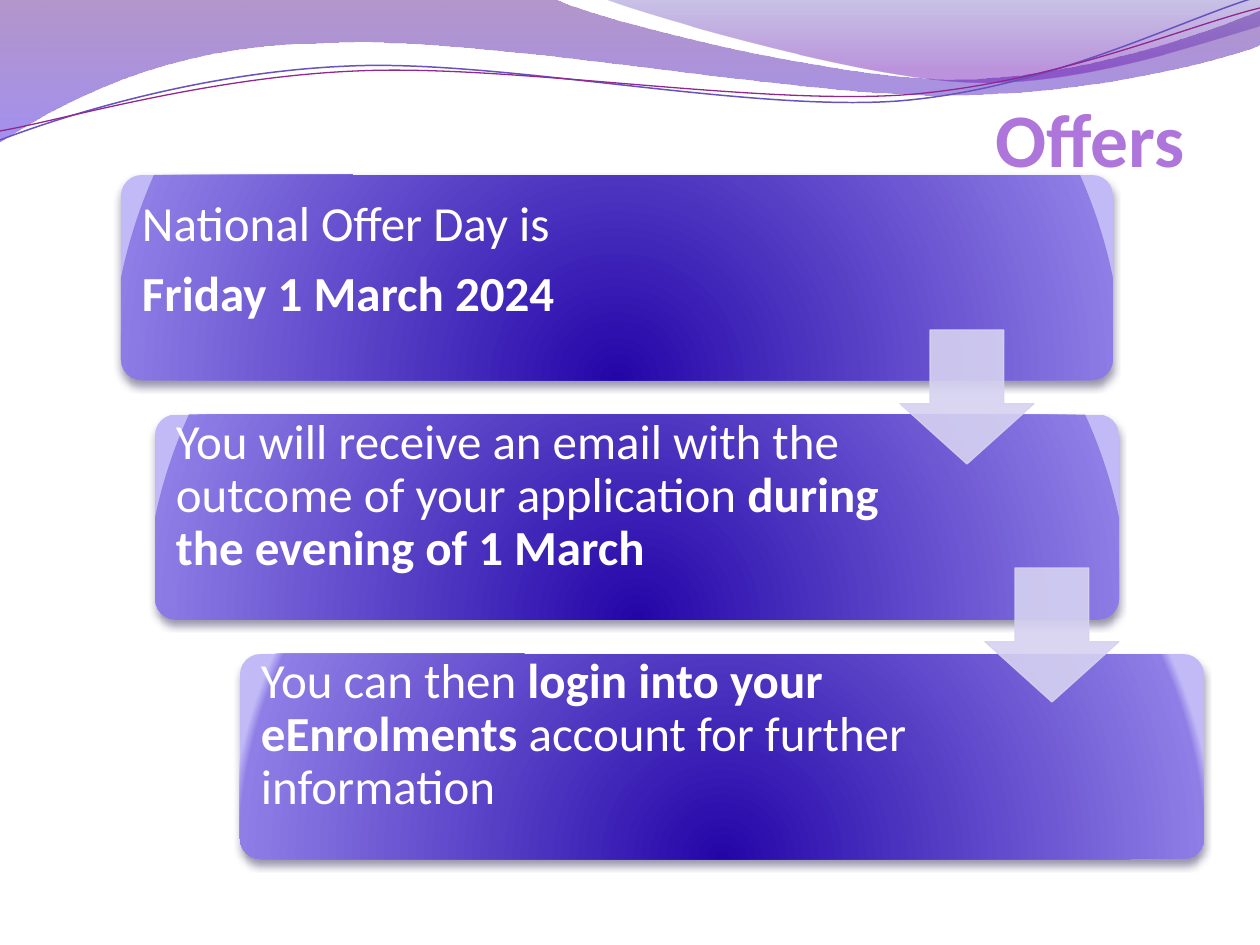
from dataclasses import dataclass

from lxml import etree
from pptx import Presentation
from pptx.dml.color import RGBColor
from pptx.enum.shapes import MSO_SHAPE
from pptx.enum.text import MSO_ANCHOR, MSO_AUTO_SIZE, PP_ALIGN
from pptx.oxml.ns import qn
from pptx.util import Pt

ROUNDED, DOWN_ARROW = MSO_SHAPE.ROUNDED_RECTANGLE, MSO_SHAPE.DOWN_ARROW
TOP, MIDDLE = MSO_ANCHOR.TOP, MSO_ANCHOR.MIDDLE
RIGHT, LEFT = PP_ALIGN.RIGHT, PP_ALIGN.LEFT
NO_AUTOFIT = MSO_AUTO_SIZE.NONE
PX = 914400 / 126
TITLE_ONLY = 5


@dataclass(frozen=True)
class Theme:
    font: str = "Calibri"
    title_size: float = 43.2
    body_size: int = 28
    title: str = "AE76DB"
    body: str = "FFFFFF"
    card_core: str = "2406A8"
    card_edge: str = "8F7EE6"
    card_corner: str = "C2BAF7"
    shadow: str = "28204D"
    arrow: str = "D6D2F1"


THEME = Theme()
TITLE = "Offers"

# Each card: left, width, text width, text inset, gradient edge, paragraphs of (text, bold)
CARDS = [
    (121, 992, 764, 22, 100, [
        [("National Offer Day is", False)],
        [("Friday 1 March 2024", True)],
    ]),
    (155, 964, 733, 1, 100, [
        [("You will receive an email with the outcome of your application ", False),
         ("during the evening of 1 March", True)],
    ]),
    (240, 964, 733, 0, 98, [
        [("You can then ", False), ("login into your eEnrolments", True),
         (" account for further information", False)],
    ]),
]
CARD_TOP, CARD_STEP, CARD_HEIGHT = 175, 239.5, 205
ARROW_LEFT, ARROW_TOP, ARROW_SIZE = 900, 330, 134
ARROW_STEP = (85, 238)

# Path pieces: one point is a straight line, three points are a Bezier curve
WAVES = [
    ((0, -1), [
        [(554, -1)],
        [(600, 21), (837, 79), (955, 79)],
        [(1075, 79), (1207, 33), (1260, 11)],
        [(1261, 45)],
        [(1239, 55), (1096, 96), (940, 95)],
        [(784, 95), (481, 35), (324, 43)],
        [(163, 44), (58, 105), (-1, 142)],
    ], [(0, "58188D", 45), (100, "5735E4", 55)]),
    ((604, -1), [
        [(641, 14), (859, 78), (969, 82)],
        [(1079, 87), (1211, 40), (1260, 26)],
        [(1260, 0)],
    ], [(0, "4E37AE", 30), (80, "6A11B3", 45)]),
]
RIBBONS = [
    ((0, 140), [
        [(60, 117), (199, 72), (349, 66)],
        [(498, 59), (747, 112), (898, 101)],
        [(1049, 89), (1182, 19), (1257, -3)],
    ], "6752BF", 0.85),
    ((0, 131), [
        [(59, 121), (207, 77), (357, 71)],
        [(508, 64), (752, 105), (903, 95)],
        [(1053, 84), (1186, 26), (1260, 8)],
    ], "92278F", 0.75),
]


def emu(*lengths):
    return [round(length * PX) for length in lengths]


def child(parent, tag, **attributes):
    return etree.SubElement(parent, qn(tag), {k: str(v) for k, v in attributes.items()})


def add_alpha(color, percent):
    child(color, "a:alpha", val=percent * 1000)


def gradient(shape, stops, radial=False):
    """Fill with (position, colour, opacity) stops, downwards or from the bottom centre."""
    shape.fill.solid()
    solid = shape._element.spPr.find(qn("a:solidFill"))
    fill = etree.Element(qn("a:gradFill"), rotWithShape="1")
    stop_list = child(fill, "a:gsLst")
    for position, color, opacity in stops:
        stop = child(stop_list, "a:gs", pos=position * 1000)
        add_alpha(child(stop, "a:srgbClr", val=color), opacity)
    if radial:
        path = child(fill, "a:path", path="circle")
        child(path, "a:fillToRect", l=50000, t=130000, r=50000, b=-30000)
    else:
        child(fill, "a:lin", ang=5400000, scaled=0)
    solid.getparent().replace(solid, fill)


def add_path(slide, start, pieces, close):
    """Build a freeform, then join each three-point piece into one Bezier curve."""
    builder = slide.shapes.build_freeform(*emu(*start))
    builder.add_line_segments([emu(*point) for piece in pieces for point in piece],
                              close=close)
    shape = builder.convert_to_shape()
    shape.shadow.inherit = False
    segments = iter(list(shape._element.spPr.iter(qn("a:lnTo"))))
    for piece in pieces:
        lines = [next(segments) for _ in piece]
        if len(piece) == 3:
            curve = etree.Element(qn("a:cubicBezTo"))
            lines[0].addprevious(curve)
            for line in lines:
                curve.append(line[0])
                line.getparent().remove(line)
    return shape


def add_span(para, text, size, color, bold):
    span = para.add_run()
    span.text = text
    span.font.name, span.font.size, span.font.bold = THEME.font, Pt(size), bold
    span.font.color.rgb = RGBColor.from_string(color)


def add_card(slide, left, top, width, edge):
    card = slide.shapes.add_shape(ROUNDED, *emu(left, top, width, CARD_HEIGHT))
    card.adjustments[0] = 0.1
    gradient(card, [(0, THEME.card_core, 100), (edge, THEME.card_edge, 100),
                    (100, THEME.card_corner, 100)], radial=True)
    card.line.fill.background()
    card.shadow.inherit = False
    effects = card._element.spPr.find(qn("a:effectLst"))
    shadow = child(effects, "a:outerShdw", blurRad=Pt(4.5), dist=Pt(3),
                   dir=5400000, rotWithShape=0)
    add_alpha(child(shadow, "a:srgbClr", val=THEME.shadow), 48)


def add_card_text(slide, left, top, width, inset, paragraphs):
    box = slide.shapes.add_textbox(*emu(left + 6, top + 2, width, CARD_HEIGHT - 12))
    frame = box.text_frame
    frame.word_wrap, frame.vertical_anchor = True, TOP
    frame.margin_left, frame.margin_right, frame.margin_top, frame.margin_bottom = emu(
        15, 15, inset, 0)
    for index, spans in enumerate(paragraphs):
        para = frame.paragraphs[0] if index == 0 else frame.add_paragraph()
        para.alignment, para.line_spacing = LEFT, 0.9
        para.space_after = Pt(9.8 if index < len(paragraphs) - 1 else 0)
        for text, bold in spans:
            add_span(para, text, THEME.body_size, THEME.body, bold)


def add_arrow(slide, left, top):
    arrow = slide.shapes.add_shape(DOWN_ARROW, *emu(left, top, ARROW_SIZE, ARROW_SIZE))
    arrow.adjustments[0], arrow.adjustments[1] = 0.55, 0.45
    arrow.shadow.inherit = False
    arrow.line.width = Pt(0.75)
    for fill in (arrow.fill, arrow.line.fill):
        fill.solid()
        fill.fore_color.rgb = RGBColor.from_string(THEME.arrow)
    for color in arrow._element.spPr.iter(qn("a:srgbClr")):
        add_alpha(color, 90)


def add_title(slide):
    title = slide.shapes.title
    title.left, title.top, title.width, title.height = emu(63, 82, 1134, 110)
    frame = title.text_frame
    frame.auto_size, frame.vertical_anchor = NO_AUTOFIT, MIDDLE
    para = frame.paragraphs[0]
    para.alignment = RIGHT
    add_span(para, TITLE, THEME.title_size, THEME.title, True)


def main():
    deck = Presentation()
    deck.slide_width, deck.slide_height = emu(1260, 945)
    slide = deck.slides.add_slide(deck.slide_layouts[TITLE_ONLY])
    for start, pieces, stops in WAVES:
        wave = add_path(slide, start, pieces, close=True)
        gradient(wave, stops)
        wave.line.fill.background()
    for start, pieces, color, width in RIBBONS:
        ribbon = add_path(slide, start, pieces, close=False)
        ribbon.fill.background()
        ribbon.line.color.rgb = RGBColor.from_string(color)
        ribbon.line.width = Pt(width)
    add_title(slide)
    for row, (left, width, text_width, inset, edge, paragraphs) in enumerate(CARDS):
        top = CARD_TOP + row * CARD_STEP
        add_card(slide, left, top, width, edge)
        add_card_text(slide, left, top, text_width, inset, paragraphs)
    for step in range(len(CARDS) - 1):
        add_arrow(slide, ARROW_LEFT + step * ARROW_STEP[0], ARROW_TOP + step * ARROW_STEP[1])
    deck.save("out.pptx")


if __name__ == "__main__":
    main()
